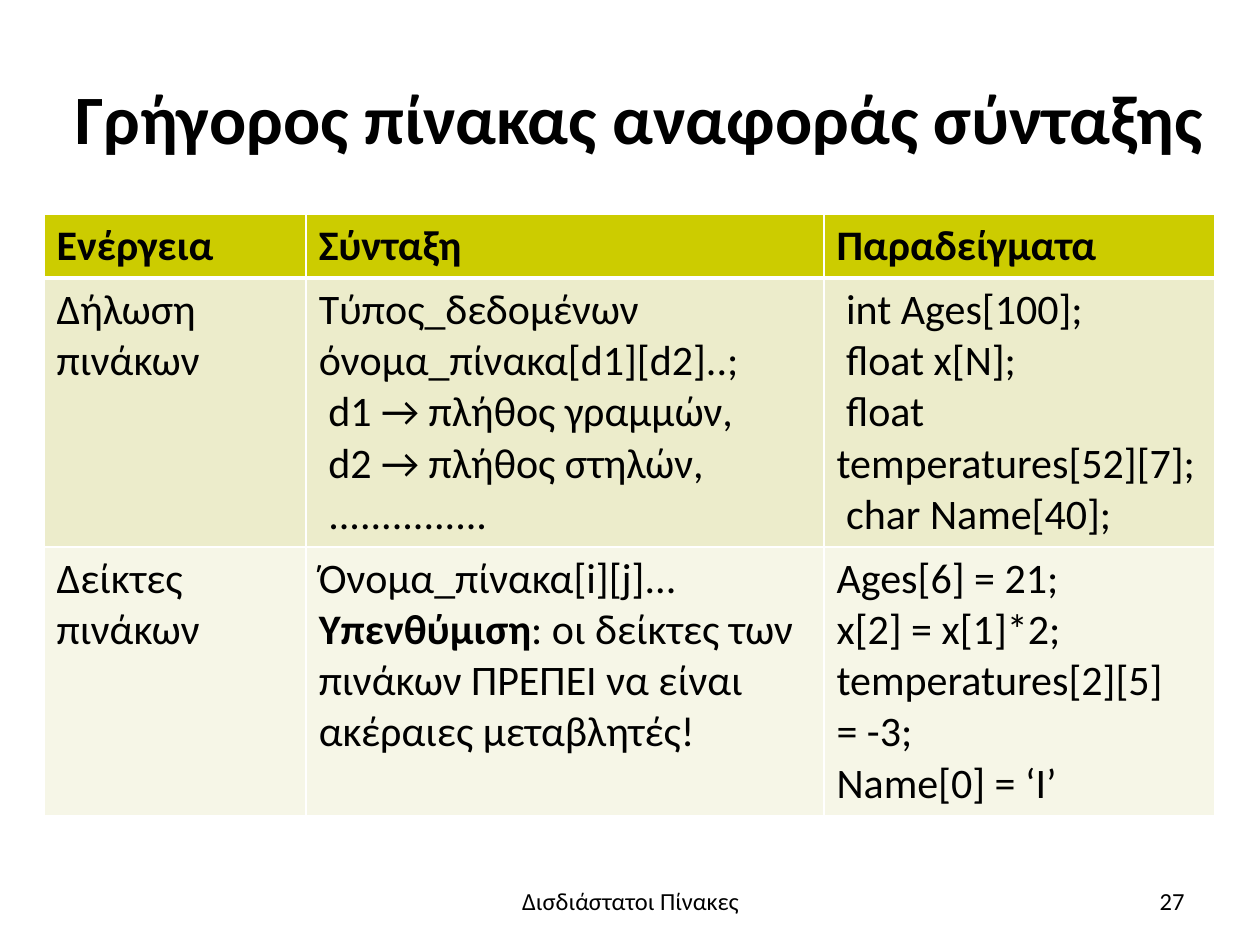
from lxml import etree
from pptx import Presentation
from pptx.dml.color import RGBColor
from pptx.enum import text
from pptx.oxml import ns
from pptx.util import Inches, Pt

COLORS = {"ink": "000000", "rule": "FFFFFF", "header": "CCCC00",
          "declaration": "ECECCB", "index": "F6F6E7"}
COLUMN_WIDTHS = [2.08, 4.11, 3.1]
ROW_HEIGHTS = [0.5, 2.1, 2.1]
ROW_FILLS = ["header", "declaration", "index"]
REFERENCE = [
    [["Ενέργεια"], ["Σύνταξη"], ["Παραδείγματα"]],
    [["Δήλωση πινάκων"],
     ["Τύπος_δεδομένων όνομα_πίνακα[d1][d2]..;",
      " d1 → πλήθος γραμμών,", " d2 → πλήθος στηλών,", " ..............."],
     [" int Ages[100];", " float x[N];", " float temperatures[52][7];",
      " char Name[40];"]],
    [["Δείκτες πινάκων"],
     ["Όνομα_πίνακα[i][j]...",
      ("Υπενθύμιση", ": οι δείκτες των πινάκων ΠΡΈΠΕΙ να είναι ακέραιες μεταβλητές!")],
     ["Ages[6] = 21;", "x[2] = x[1]*2;", "temperatures[2][5]  = -3;",
      "Name[0] = ‘I’"]],
]


class SyntaxSlide:
    font_name = "Calibri"

    def __init__(self, deck):
        self.slide = deck.slides.add_slide(deck.slide_layouts[5])

    def style(self, font, size, bold=False):
        font.name = self.font_name
        font.size = Pt(size)
        font.bold = bold
        font.color.rgb = RGBColor.from_string(COLORS["ink"])

    def line(self, frame, wording, size, align, bold=False):
        frame.word_wrap = True
        frame.vertical_anchor = text.MSO_ANCHOR.MIDDLE
        paragraph = frame.paragraphs[0]
        paragraph.text = wording
        paragraph.alignment = align
        self.style(paragraph.font, size, bold)

    def title(self, wording, left, top, width, height):
        heading = self.slide.shapes.title
        heading.left, heading.top = Inches(left), Inches(top)
        heading.width, heading.height = Inches(width), Inches(height)
        self.line(heading.text_frame, wording, 39.6, text.PP_ALIGN.CENTER, True)

    def footer(self, wording, left, width, align):
        box = self.slide.shapes.add_textbox(
            Inches(left), Inches(6.95), Inches(width), Inches(0.4))
        self.line(box.text_frame, wording, 14, align)

    def borders(self, cell, top, bottom):
        properties = cell._tc.get_or_add_tcPr()
        for index, (side, width) in enumerate(
                [("L", 1), ("R", 1), ("T", top), ("B", bottom)]):
            edge = etree.Element(ns.qn(f"a:ln{side}"), w=str(Pt(width)))
            fill = etree.SubElement(edge, ns.qn("a:solidFill"))
            etree.SubElement(fill, ns.qn("a:srgbClr"), val=COLORS["rule"])
            properties.insert(index, edge)

    def cell(self, cell, lines, fill, bold):
        cell.fill.solid()
        cell.fill.fore_color.rgb = RGBColor.from_string(COLORS[fill])
        frame = cell.text_frame
        for index, wording in enumerate(lines):
            paragraph = frame.paragraphs[0] if index == 0 else frame.add_paragraph()
            if isinstance(wording, tuple):
                for lead, part in zip((True, False), wording):
                    run = paragraph.add_run()
                    run.text = part
                    self.style(run.font, 24, lead)
            else:
                paragraph.text = wording
                self.style(paragraph.font, 24, bold)

    def table(self, rows, left, top):
        table = self.slide.shapes.add_table(
            len(rows), len(COLUMN_WIDTHS), Inches(left), Inches(top),
            Inches(sum(COLUMN_WIDTHS)), Inches(sum(ROW_HEIGHTS))).table
        for column, width in zip(table.columns, COLUMN_WIDTHS):
            column.width = Inches(width)
        for r, row in enumerate(rows):
            table.rows[r].height = Inches(ROW_HEIGHTS[r])
            for c, lines in enumerate(row):
                cell = table.cell(r, c)
                self.cell(cell, lines, ROW_FILLS[r], bold=r == 0)
                self.borders(cell, top=3 if r == 1 else 1, bottom=3 if r == 0 else 1)


def main():
    deck = Presentation()
    deck.slide_width, deck.slide_height = Inches(10), Inches(7.5)
    page = SyntaxSlide(deck)
    page.title("Γρήγορος πίνακας αναφοράς σύνταξης", 0.43, 0.3, 9.29, 1.25)
    page.table(REFERENCE, 0.35, 1.7)
    page.footer("Δισδιάστατοι Πίνακες", 3.42, 3.17, text.PP_ALIGN.CENTER)
    page.footer("27", 7.17, 2.33, text.PP_ALIGN.RIGHT)
    deck.save("out.pptx")


if __name__ == "__main__":
    main()
